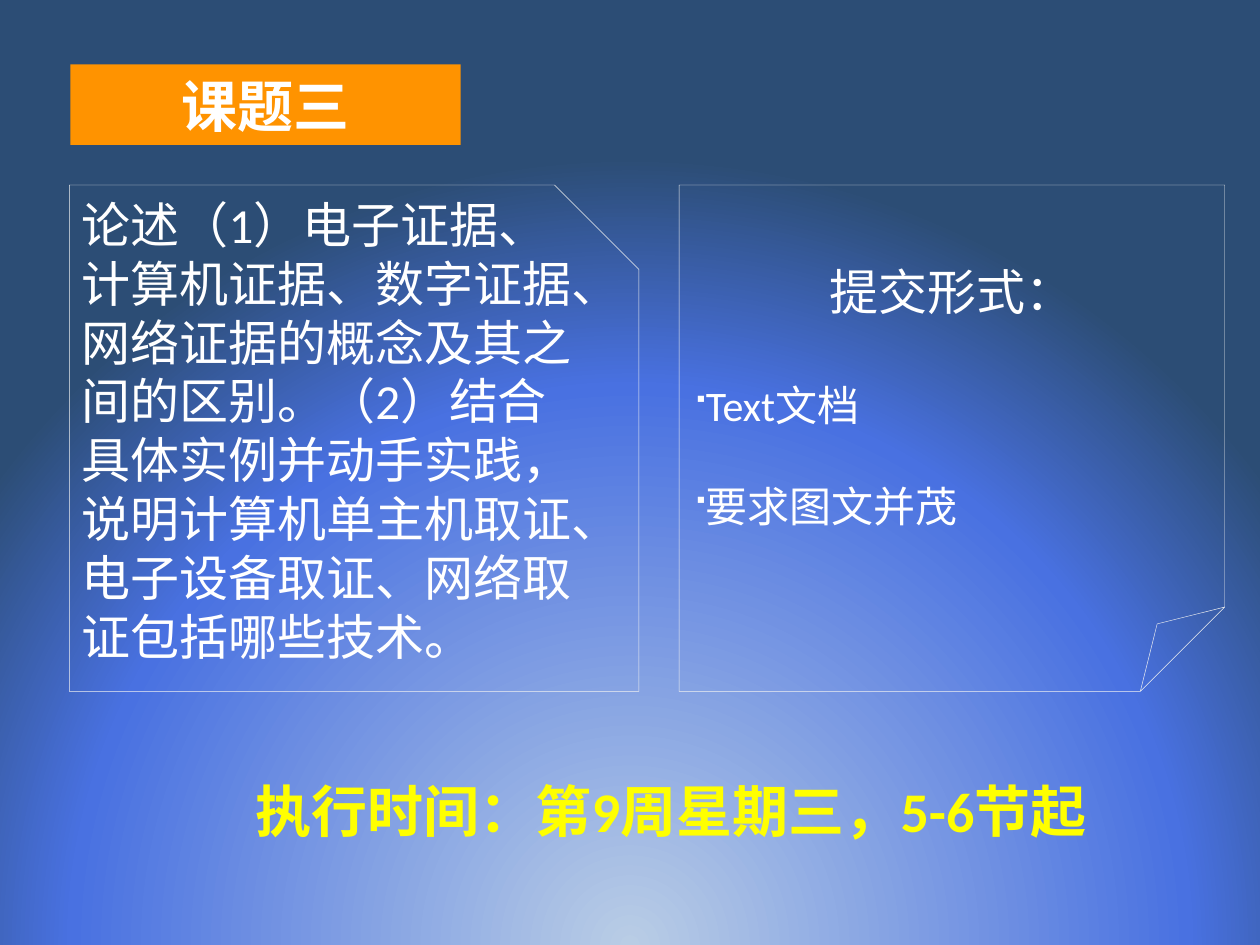
from lxml import etree
from pptx import Presentation
from pptx import util as u
from pptx.dml.color import RGBColor
from pptx.enum import shapes, text
from pptx.oxml import parse_xml
from pptx.oxml.ns import nsdecls, qn

WHITE = RGBColor(0xFF, 0xFF, 0xFF)
YELLOW = RGBColor(0xFF, 0xFF, 0x00)
ORANGE = RGBColor(0xFF, 0x93, 0x00)
OUTLINE = RGBColor(0xF2, 0xF2, 0xF2)
GLOW = RGBColor(0xB9, 0xCD, 0xE5)
BLUE = RGBColor(0x49, 0x71, 0xE1)
NAVY = RGBColor(0x2C, 0x4D, 0x75)
LATIN_FONT = "Calibri"
CHINESE_FONT = "Noto Sans CJK SC"
BULLET_FONT = "Wingdings"
PANEL_TOP, PANEL_HEIGHT = 3.73, 10.21


def paint_background(page):
    page.background.fill.solid()
    properties = page.background._cSld.bg.bgPr
    stops = "".join(
        f'<a:gs pos="{percent * 1000}"><a:srgbClr val="{color}"/></a:gs>'
        for percent, color in ((0, GLOW), (71, BLUE), (100, NAVY))
    )
    gradient = parse_xml(
        f'<a:gradFill {nsdecls("a")} rotWithShape="1"><a:gsLst>{stops}</a:gsLst>'
        '<a:path path="circle">'
        '<a:fillToRect l="50000" t="130000" r="50000" b="-30000"/>'
        '</a:path></a:gradFill>'
    )
    properties.replace(properties.find(qn("a:solidFill")), gradient)


def add_box(page, kind, left, top, width, height, fill=None, line=None):
    box = page.shapes.add_shape(
        kind, u.Cm(left), u.Cm(top), u.Cm(width), u.Cm(height)
    )
    box.shadow.inherit = False
    if fill is None:
        box.fill.background()
    else:
        box.fill.solid()
        box.fill.fore_color.rgb = fill
    if line is None:
        box.line.fill.background()
    else:
        box.line.color.rgb = line
        box.line.width = u.Pt(0.25)
    box.text_frame.word_wrap = True
    box.text_frame.vertical_anchor = text.MSO_ANCHOR.MIDDLE
    return box


def write(box, words, size=28, color=WHITE, bold=False, font=LATIN_FONT,
          align=text.PP_ALIGN.LEFT, before=0, bullet=None):
    frame = box.text_frame
    para = frame.add_paragraph() if frame.text else frame.paragraphs[0]
    para.alignment = align
    para.space_before = u.Pt(before)
    if bullet:
        properties = para._p.get_or_add_pPr()
        etree.SubElement(properties, qn("a:buFont")).set("typeface", BULLET_FONT)
        etree.SubElement(properties, qn("a:buChar")).set("char", bullet)
    span = para.add_run()
    span.text = words
    span.font.size = u.Pt(size)
    span.font.bold = bold
    span.font.color.rgb = color
    span.font.name = font
    east_asian = etree.SubElement(span._r.get_or_add_rPr(), qn("a:ea"))
    east_asian.set("typeface", CHINESE_FONT)


def add_heading(page):
    box = add_box(page, shapes.MSO_SHAPE.RECTANGLE, 1.42, 1.3, 7.87, 1.62,
                  fill=ORANGE)
    write(box, "课题三", size=32, bold=True, font=CHINESE_FONT,
          align=text.PP_ALIGN.CENTER)


def add_topic(page):
    box = add_box(page, shapes.MSO_SHAPE.SNIP_1_RECTANGLE,
                  1.4, PANEL_TOP, 11.48, PANEL_HEIGHT, line=OUTLINE)
    box.text_frame.margin_bottom = u.Cm(1.32)
    write(box, "论述（1）电子证据、计算机证据、数字证据、网络证据的概念及其之间的区别。"
               "（2）结合具体实例并动手实践，说明计算机单主机取证、电子设备取证、"
               "网络取证包括哪些技术。")


def add_schedule(page):
    box = page.shapes.add_textbox(
        u.Cm(4.9), u.Cm(15.52), u.Cm(18.06), u.Cm(1.62)
    )
    box.text_frame.word_wrap = True
    box.text_frame.auto_size = text.MSO_AUTO_SIZE.SHAPE_TO_FIT_TEXT
    write(box, "执行时间：第9周星期三，5-6节起", size=32, color=YELLOW, bold=True)


def add_submission(page):
    box = add_box(page, shapes.MSO_SHAPE.FOLDED_CORNER,
                  13.69, PANEL_TOP, 11, PANEL_HEIGHT, line=OUTLINE)
    write(box, "提交形式：", align=text.PP_ALIGN.CENTER)
    write(box, "Text文档", size=24, before=34, bullet="■")
    write(box, "要求图文并茂", size=24, before=29, bullet="■")


def main():
    deck = Presentation()
    deck.slide_width, deck.slide_height = u.Cm(25.4), u.Cm(19.05)
    page = deck.slides.add_slide(deck.slide_layouts[6])
    paint_background(page)
    add_heading(page)
    add_topic(page)
    add_schedule(page)
    add_submission(page)
    deck.save("out.pptx")


if __name__ == "__main__":
    main()
